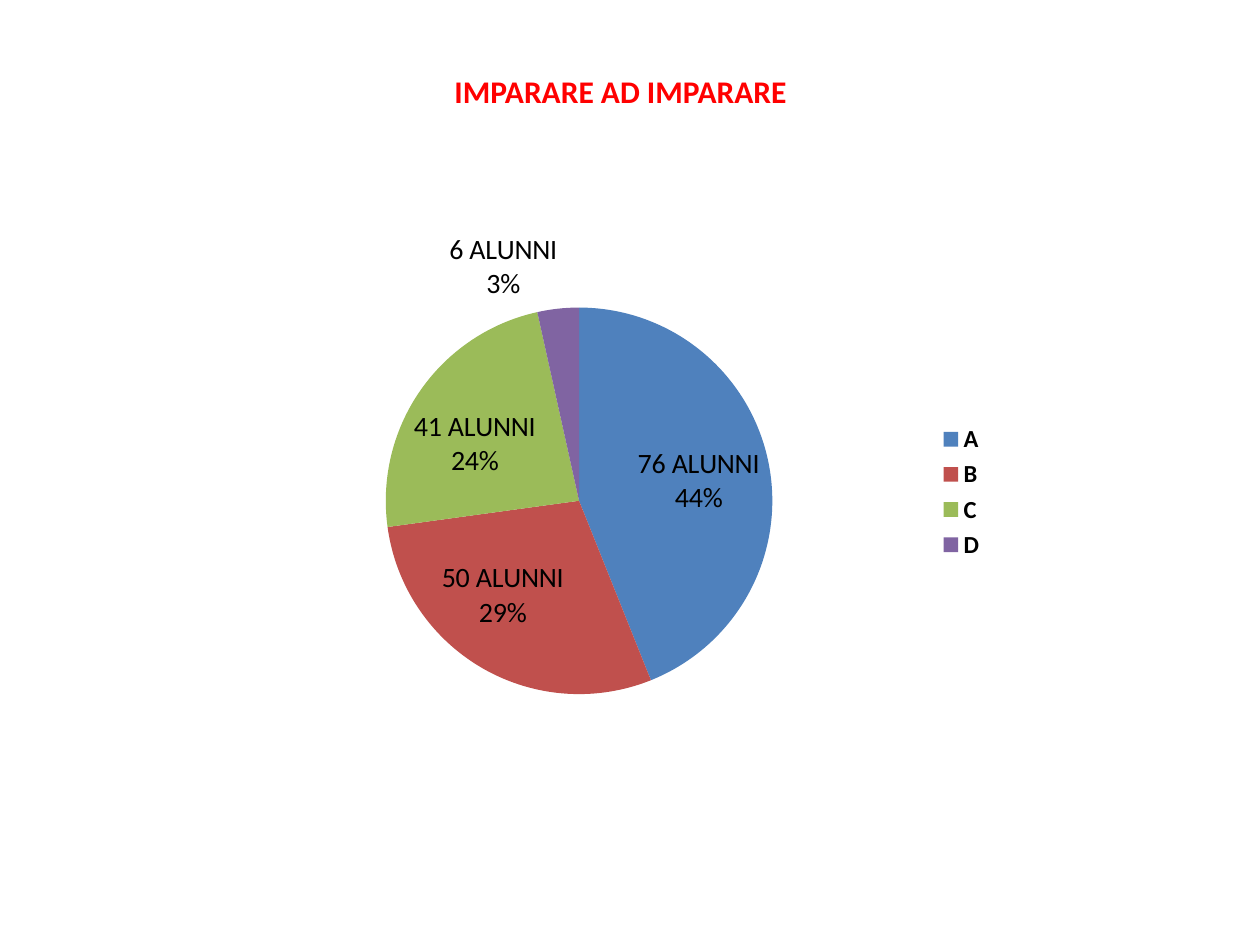
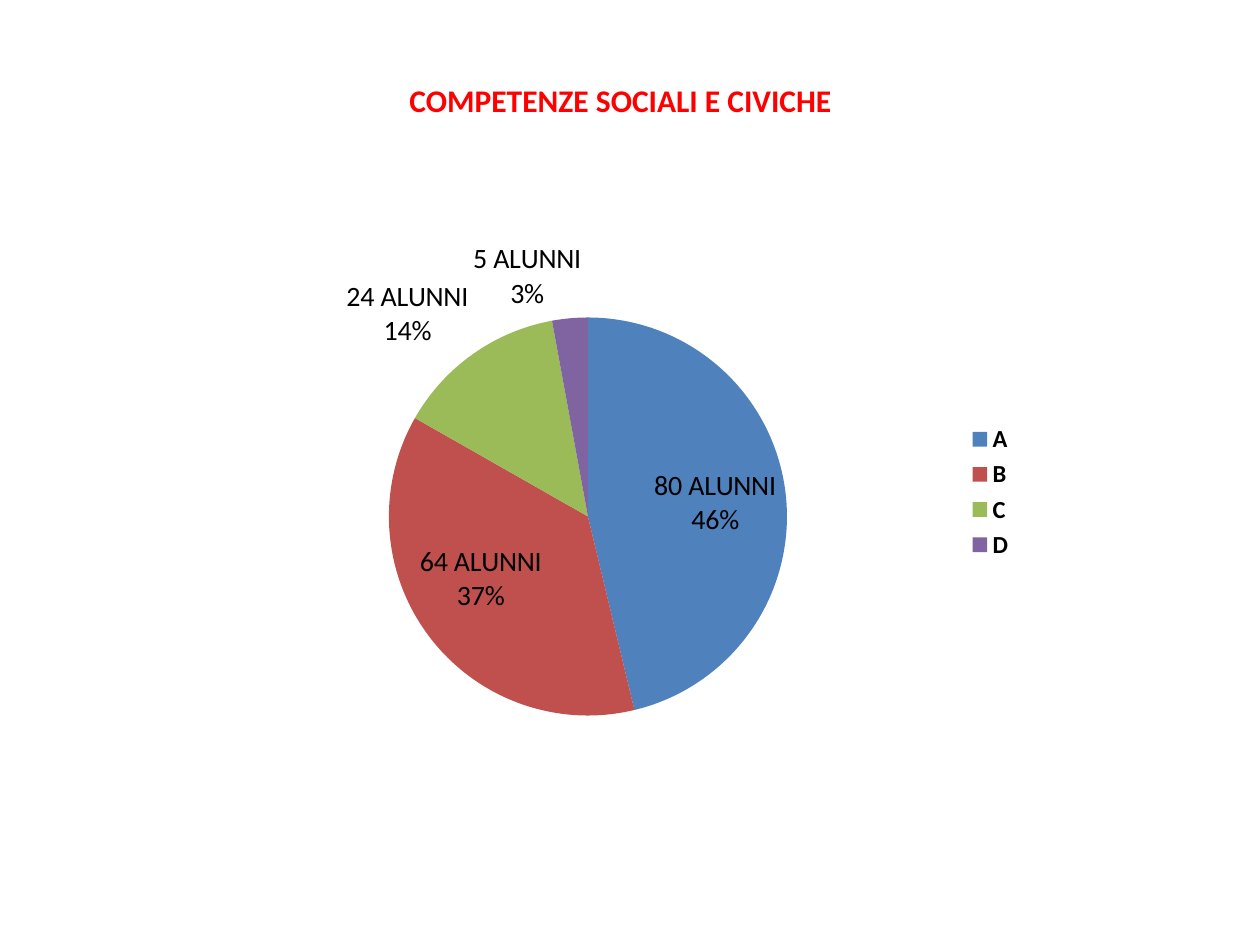
import pptx
import pptx.chart.data
import pptx.dml.color
import pptx.enum.chart
import pptx.enum.text
import pptx.oxml
import pptx.oxml.ns
import pptx.util
from dataclasses import dataclass

RGB = pptx.dml.color.RGBColor.from_string
Inches, Pt = pptx.util.Inches, pptx.util.Pt
LABEL_POS = pptx.enum.chart.XL_LABEL_POSITION


@dataclass(frozen=True)
class Theme:
    font: str = "Calibri"
    title: str = "FF0000"
    text: str = "000000"
    slices: tuple = ("4F81BD", "C0504D", "9BBB59", "8064A2")
    title_size: int = 18
    label_size: int = 16
    legend_size: int = 14
    chart_size: int = 10


THEME = Theme()
GRADES = ("A", "B", "C", "D")

# Boxes are left, top, width, height in inches; pie is left, top, diameter
SLIDES = (
    dict(title="IMPARARE AD IMPARARE", title_box=(2.17, 0.52, 5.51, 0.4),
         chart_box=(1.46, 1.7, 6.46, 4.41), pie=(3.06, 2.44, 3.07),
         pupils=(76, 50, 41, 6)),
    dict(title="COMPETENZE SOCIALI E CIVICHE", title_box=(2.17, 0.59, 5.51, 0.4),
         chart_box=(1.54, 1.78, 6.61, 4.25), pie=(3.09, 2.52, 3.16),
         pupils=(80, 64, 24, 5)),
)


def style(font, size, color, bold=False):
    font.name, font.size, font.bold = THEME.font, Pt(size), bold
    font.color.rgb = RGB(color)


def add_title(slide, box, text):
    tf = slide.shapes.add_textbox(*map(Inches, box)).text_frame
    tf.word_wrap = True
    tf.auto_size = pptx.enum.text.MSO_AUTO_SIZE.SHAPE_TO_FIT_TEXT
    p = tf.paragraphs[0]
    p.text = text
    p.alignment = pptx.enum.text.PP_ALIGN.CENTER
    style(p.runs[0].font, THEME.title_size, THEME.title, True)


def place_pie(chart, box, pie):
    """Fix the pie's circle as shares of the chart box."""
    left, top, width, height = box
    x, y, d = pie
    shares = dict(x=(x - left) / width, y=(y - top) / height, w=d / width, h=d / height)
    values = "".join(f'<c:{k} val="{v:.3f}"/>' for k, v in shares.items())
    layout = pptx.oxml.parse_xml(
        f'<c:layout {pptx.oxml.ns.nsdecls("c")}><c:manualLayout>'
        '<c:layoutTarget val="inner"/><c:xMode val="edge"/><c:yMode val="edge"/>'
        f'{values}</c:manualLayout></c:layout>')
    area = chart.plots[0]._element.getparent()
    for old in area.findall(pptx.oxml.ns.qn("c:layout")):
        area.remove(old)
    area.insert(0, layout)


def label_slice(point, pupils, total):
    label = point.data_label
    tf = label.text_frame
    tf.text = f"{pupils} ALUNNI\n{pupils / total:.0%}"
    for p in tf.paragraphs:
        style(p.runs[0].font, THEME.label_size, THEME.text)
    label.position = LABEL_POS.BEST_FIT


def add_pie(slide, box, pie, pupils):
    data = pptx.chart.data.CategoryChartData()
    data.categories = GRADES
    data.add_series("Series 1", pupils)
    chart = slide.shapes.add_chart(
        pptx.enum.chart.XL_CHART_TYPE.PIE, *map(Inches, box), data).chart
    chart.has_title = False
    style(chart.font, THEME.chart_size, THEME.text)
    place_pie(chart, box, pie)

    # Legend
    chart.has_legend = True
    chart.legend.position = pptx.enum.chart.XL_LEGEND_POSITION.RIGHT
    chart.legend.include_in_layout = False
    style(chart.legend.font, THEME.legend_size, THEME.text, True)

    # Slices and their labels
    plot = chart.plots[0]
    plot.vary_by_categories = True
    for i, (n, color) in enumerate(zip(pupils, THEME.slices)):
        point = plot.series[0].points[i]
        point.format.fill.solid()
        point.format.fill.fore_color.rgb = RGB(color)
        label_slice(point, n, sum(pupils))

    # Defaults for the whole series
    labels = plot.series[0].data_labels
    labels.show_value = labels.show_percentage = True
    labels.position = LABEL_POS.BEST_FIT
    style(labels.font, THEME.label_size, THEME.text, True)


def add_results_slide(prs, title, title_box, chart_box, pie, pupils):
    slide = prs.slides.add_slide(prs.slide_layouts[6])
    add_title(slide, title_box, title)
    add_pie(slide, chart_box, pie, pupils)


def main():
    prs = pptx.Presentation()
    prs.slide_width, prs.slide_height = Inches(10), Inches(7.5)
    for content in SLIDES:
        add_results_slide(prs, **content)
    prs.save("out.pptx")


if __name__ == "__main__":
    main()
